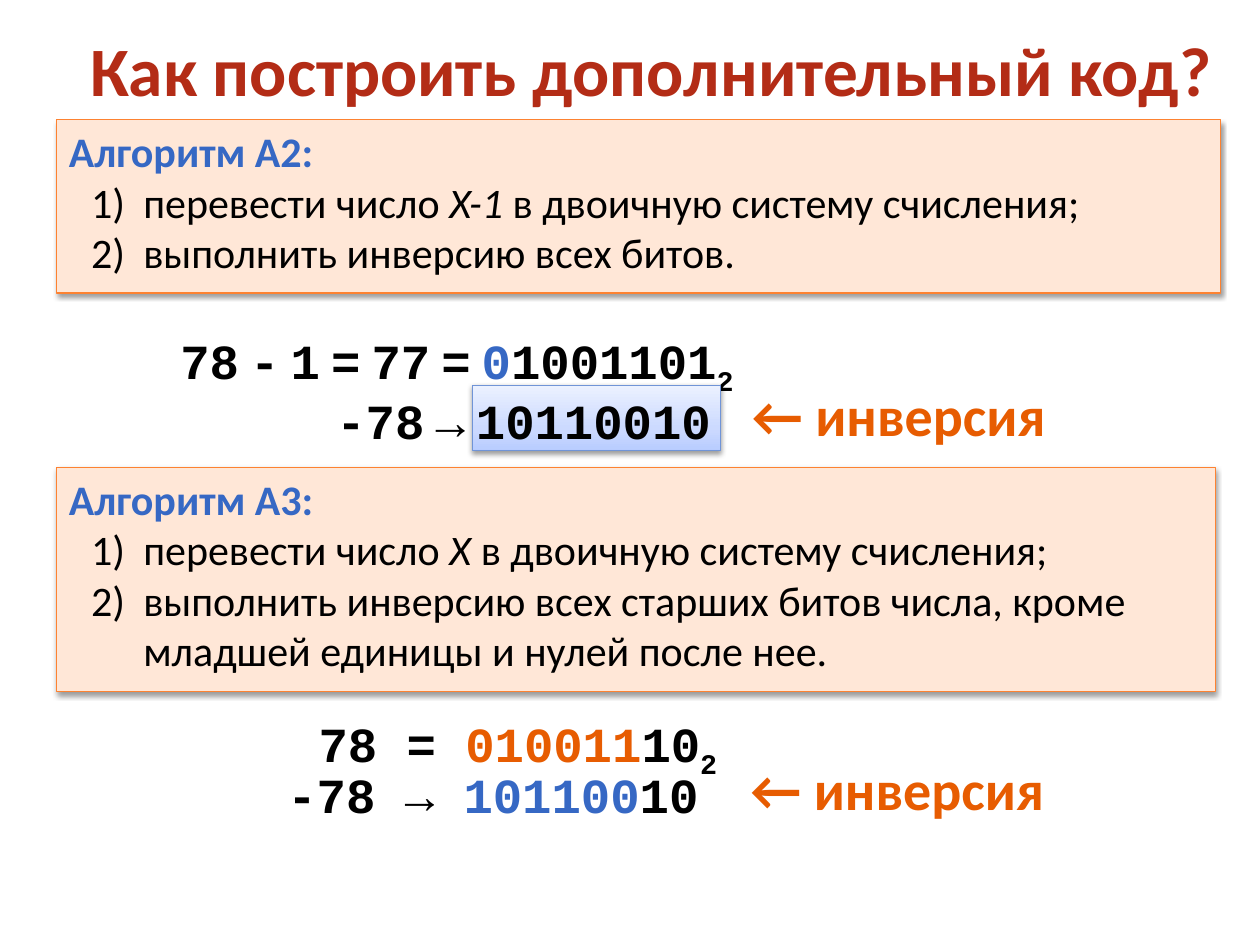
from lxml import etree
from pptx import Presentation
from pptx import util as u
from pptx.dml.color import RGBColor
from pptx.enum import shapes, text
from pptx.oxml import parse_xml
from pptx.oxml.ns import nsdecls, qn

BRICK = RGBColor(0xB3, 0x2C, 0x16)
BLUE = RGBColor(0x36, 0x68, 0xC4)
ORANGE = RGBColor(0xE7, 0x5C, 0x01)
BLACK = RGBColor(0, 0, 0)
PEACH = RGBColor(0xFF, 0xE7, 0xD7)
PEACH_EDGE = RGBColor(0xFD, 0x82, 0x31)
RESULT_EDGE = RGBColor(0x70, 0x94, 0xD7)
RESULT_STOPS = [(0, "B8CCFF"), (35, "CCDAFF"), (100, "EBF1FF")]

HEADING = dict(name="Calibri", size=u.Pt(24), bold=True, color=BLUE)
STEP = dict(name="Calibri", size=u.Pt(24), bold=False, color=BLACK)
VARIABLE = {**STEP, "italic": True}
CODE = dict(name="Courier New", size=u.Pt(28), bold=True, color=BLACK)
CODE_BLUE = {**CODE, "color": BLUE}
CODE_ORANGE = {**CODE, "color": ORANGE}
CODE_GAP = {**CODE, "name": "Calibri"}
NOTE = dict(name="Calibri", size=u.Pt(32), bold=True, color=ORANGE)
TITLE = dict(name="Calibri", size=u.Pt(39.6), bold=True, color=BRICK)
SUBSCRIPT = ("2", {**CODE, "baseline": -25000})


def add_runs(paragraph, runs):
    for words, style in runs:
        run = paragraph.add_run()
        run.text = words
        for key, value in style.items():
            if key == "color":
                run.font.color.rgb = value
            elif key == "baseline":
                run.font._element.set("baseline", str(value))
            else:
                setattr(run.font, key, value)


def narrow_spaced(words):
    """Code runs whose spaces are set in the narrower text font."""
    runs = []
    for word in words.split():
        runs += [(word, CODE), (" ", CODE_GAP)]
    return runs


def add_line(slide, box, runs, align=text.PP_ALIGN.LEFT, wrap=False,
             anchor=text.MSO_ANCHOR.TOP, fit=text.MSO_AUTO_SIZE.SHAPE_TO_FIT_TEXT):
    frame = slide.shapes.add_textbox(*map(u.Cm, box)).text_frame
    for key, value in dict(word_wrap=wrap, auto_size=fit, vertical_anchor=anchor).items():
        setattr(frame, key, value)
    frame.paragraphs[0].alignment = align
    add_runs(frame.paragraphs[0], runs)


def add_panel(slide, box, edge):
    """Bordered rectangle with a soft shadow below; its fill is left to the caller."""
    panel = slide.shapes.add_shape(shapes.MSO_SHAPE.RECTANGLE, *map(u.Cm, box))
    panel.line.color.rgb = edge
    panel.line.width = u.Pt(0.75)
    panel.shadow.inherit = False
    effects = panel._element.spPr.find(qn("a:effectLst"))
    effects.append(parse_xml(
        f'<a:outerShdw {nsdecls("a")} blurRad="40000" dist="20000" dir="5400000" '
        'rotWithShape="0"><a:srgbClr val="000000"><a:alpha val="38000"/></a:srgbClr>'
        '</a:outerShdw>'))
    return panel


def add_algorithm(slide, box, heading, steps):
    panel = add_panel(slide, box, PEACH_EDGE)
    panel.fill.solid()
    panel.fill.fore_color.rgb = PEACH
    frame = panel.text_frame
    frame.word_wrap = True
    frame.vertical_anchor = text.MSO_ANCHOR.TOP
    frame.paragraphs[0].alignment = text.PP_ALIGN.LEFT
    add_runs(frame.paragraphs[0], [(heading, HEADING)])
    for runs in steps:
        step = frame.add_paragraph()
        step.alignment = text.PP_ALIGN.LEFT
        properties = step._p.get_or_add_pPr()
        properties.set("marL", str(u.Cm(1.5)))
        properties.set("indent", str(-u.Cm(1.05)))
        etree.SubElement(properties, qn("a:buFont"), typeface="+mj-lt")
        etree.SubElement(properties, qn("a:buAutoNum"), type="arabicParenR")
        add_runs(step, runs)


def add_result_highlight(slide, box):
    highlight = add_panel(slide, box, RESULT_EDGE)
    stops = "".join(f'<a:gs pos="{pos * 1000}"><a:srgbClr val="{color}"/></a:gs>'
                    for pos, color in RESULT_STOPS)
    gradient = parse_xml(f'<a:gradFill {nsdecls("a")} rotWithShape="1"><a:gsLst>{stops}'
                         '</a:gsLst><a:lin ang="16200000" scaled="0"/></a:gradFill>')
    highlight._element.spPr.find(qn("a:prstGeom")).addnext(gradient)


def add_example(slide, number_box, number, inverse_box, inverse, note_box, highlight_box=None):
    """The binary number, its inverse below and the note at the right."""
    right = text.PP_ALIGN.RIGHT
    add_line(slide, number_box, number + [SUBSCRIPT], right)
    if highlight_box:
        add_result_highlight(slide, highlight_box)
    add_line(slide, inverse_box, inverse, right, wrap=True)
    add_line(slide, note_box, [("← инверсия", NOTE)])


def main():
    deck = Presentation()
    deck.slide_width, deck.slide_height = u.Cm(25.4), u.Cm(19.05)
    slide = deck.slides.add_slide(deck.slide_layouts[6])

    add_line(slide, (1.27, -0.2, 23.72, 3.18),
             [("Как построить дополнительный код?", TITLE)], text.PP_ALIGN.CENTER,
             wrap=True, anchor=text.MSO_ANCHOR.MIDDLE, fit=text.MSO_AUTO_SIZE.NONE)

    system = ("в двоичную систему счисления;", STEP)
    add_algorithm(slide, (1.14, 2.41, 23.47, 3.5), "Алгоритм А2:", [
        [("перевести число ", STEP), ("X-1 ", VARIABLE), system],
        [("выполнить инверсию всех битов.", STEP)]])
    add_example(
        slide,
        (2.92, 6.53, 12.12, 1.45),
        narrow_spaced("78 - 1 = 77 =") + [("0", CODE_BLUE), ("1001101", CODE)],
        (5.94, 7.75, 8.64, 1.45), narrow_spaced("-78 →") + [("10110010", CODE)],
        (14.91, 7.54, 6.58, 1.63), highlight_box=(9.52, 7.77, 5, 1.32))

    add_algorithm(slide, (1.14, 9.42, 23.37, 4.52), "Алгоритм А3:", [
        [("перевести число ", STEP), ("X ", VARIABLE), system],
        [("выполнить инверсию всех старших битов числа, кроме "
          "младшей единицы и нулей после нее.", STEP)]])
    add_example(
        slide,
        (6.05, 14.25, 8.66, 1.45),
        [("78 = ", CODE), ("010011", CODE_ORANGE), ("10", CODE)],
        (4.8, 15.29, 9.53, 1.45),
        [("-78 → ", CODE), ("101100", CODE_BLUE), ("10", CODE)],
        (14.88, 15.09, 6.58, 1.63))

    deck.save("out.pptx")


if __name__ == "__main__":
    main()
